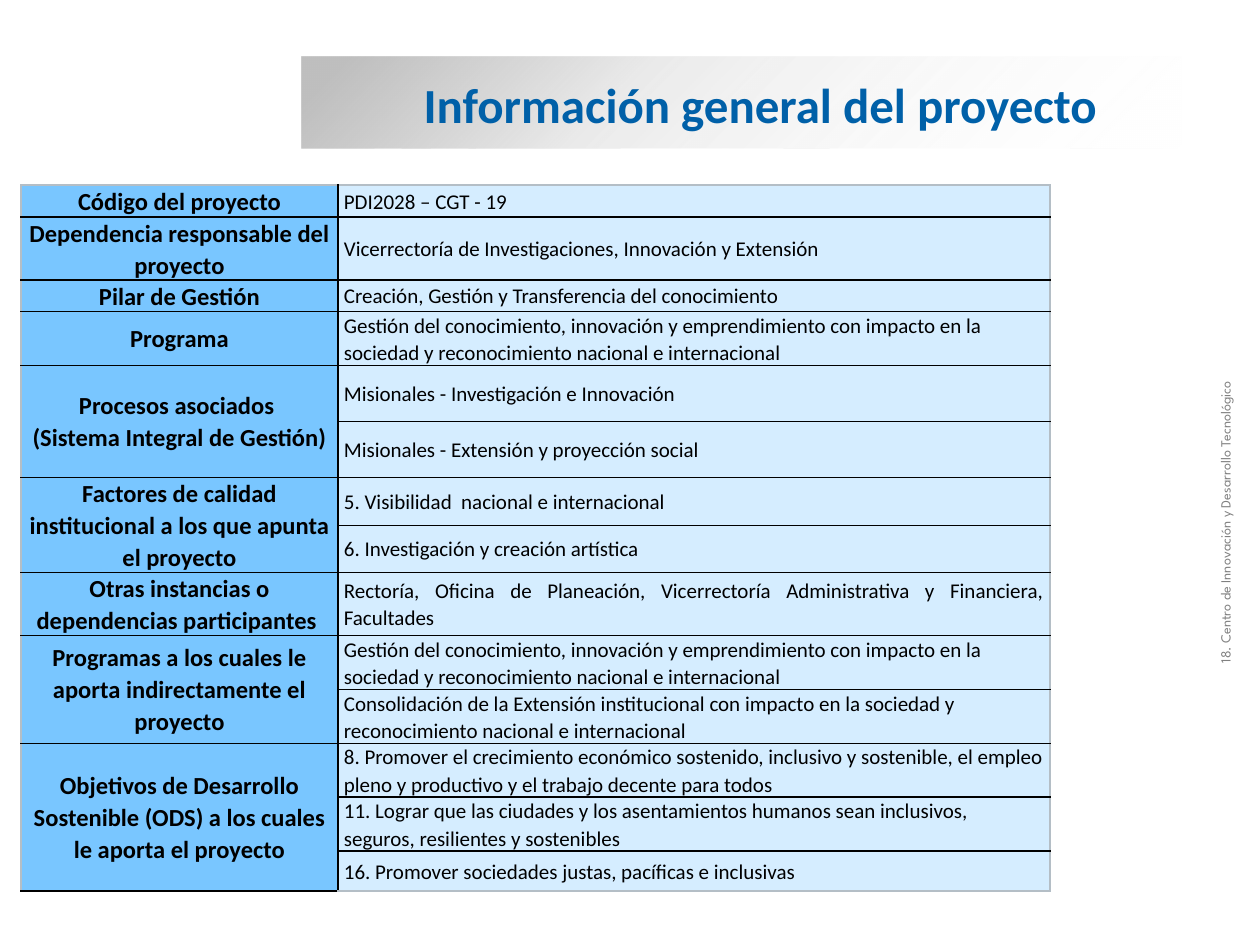
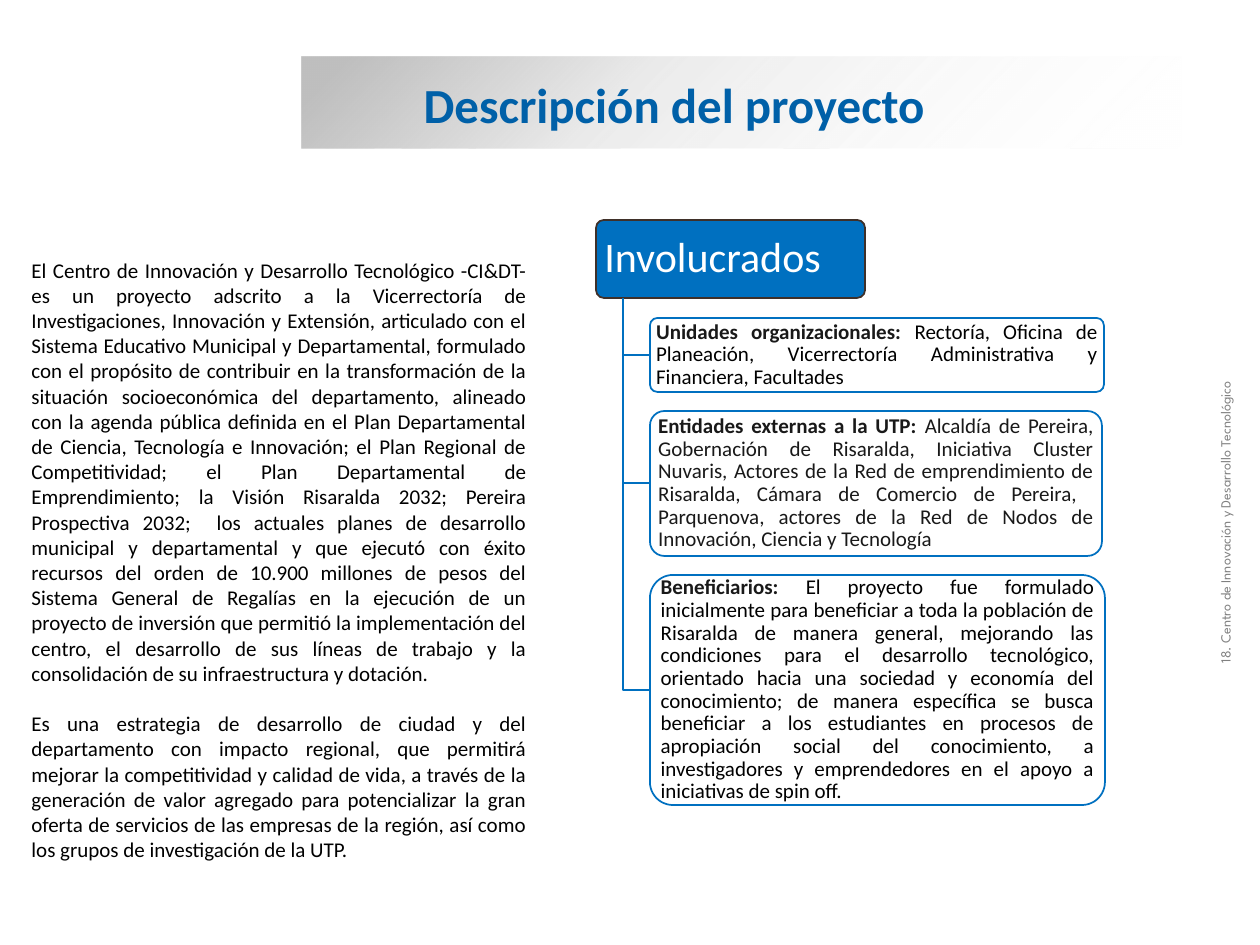
from dataclasses import dataclass

from pptx import Presentation
from pptx.dml.color import RGBColor
from pptx.enum.shapes import MSO_SHAPE
from pptx.enum.text import MSO_ANCHOR, MSO_AUTO_SIZE, PP_ALIGN
from pptx.oxml import parse_xml
from pptx.oxml.ns import nsdecls, qn
from pptx.util import Pt

RECTANGLE, ROUNDED = MSO_SHAPE.RECTANGLE, MSO_SHAPE.ROUNDED_RECTANGLE
MIDDLE, NO_AUTOFIT = MSO_ANCHOR.MIDDLE, MSO_AUTO_SIZE.NONE
LEFT, CENTER, JUSTIFY = PP_ALIGN.LEFT, PP_ALIGN.CENTER, PP_ALIGN.JUSTIFY
SCALE = 914400 / 126


@dataclass(frozen=True)
class Theme:
    font: str = "Calibri"
    footer_font: str = "League Spartan"
    title: str = "0060A8"
    accent: str = "0070C0"
    header_line: str = "3F3029"
    band: str = "BFBFBF"
    white: str = "FFFFFF"
    black: str = "000000"
    dark: str = "191919"
    footer: str = "808080"
    label_fill: str = "79C6FF"
    value_fill: str = "D5EDFF"
    outer_border: str = "B4BEC6"
    title_size: int = 28
    header_size: int = 24
    label_size: int = 14
    body_size: int = 12
    footer_size: int = 8


theme = Theme()


def px(value):
    return round(value * SCALE)


def style(font, size, color, bold=False, name=theme.font):
    font.name = name
    font.size = Pt(size)
    font.bold = bold
    font.color.rgb = RGBColor.from_string(color)


presentation = Presentation()
presentation.slide_width = px(1260)
presentation.slide_height = px(945)
title_only = presentation.slide_layouts[5]

slides = []
for title_text in ("Información general del proyecto", "Descripción del proyecto"):
    slide = presentation.slides.add_slide(title_only)
    slides.append(slide)

    band = slide.shapes.add_shape(RECTANGLE, px(302), px(57), px(880), px(91))
    band.shadow.inherit = False
    band.line.fill.background()
    band.fill.gradient()
    band.fill.gradient_angle = 315
    stops = band.element.spPr.find(qn("a:gradFill")).find(qn("a:gsLst"))
    for stop in list(stops):
        stops.remove(stop)
    for position, color, alpha in ((5, theme.band, 100), (37, theme.band, 31), (100, theme.white, 0)):
        stops.append(parse_xml(
            f'<a:gs {nsdecls("a")} pos="{position * 1000}"><a:srgbClr val="{color}">'
            f'<a:alpha val="{alpha * 1000}"/></a:srgbClr></a:gs>'))

    title = slide.shapes.title
    title.left, title.top, title.width, title.height = px(411), px(68), px(781), px(72)
    band.element.addnext(title.element)
    title_frame = title.text_frame
    title_frame.auto_size = NO_AUTOFIT
    title_frame.vertical_anchor = MIDDLE
    paragraph = title_frame.paragraphs[0]
    paragraph.text = title_text
    paragraph.alignment = LEFT
    style(paragraph.font, theme.title_size, theme.title, True)

    footer = slide.shapes.add_textbox(px(908), px(343), px(635), px(30))
    footer.rotation = 270
    footer.text_frame.word_wrap = True
    paragraph = footer.text_frame.paragraphs[0]
    paragraph.text = "18. Centro de Innovación y Desarrollo Tecnológico"
    style(paragraph.font, theme.footer_size, theme.footer, name=theme.footer_font)

information, description = slides

knowledge_program = (
    "Gestión del conocimiento, innovación y emprendimiento con impacto en la "
    "sociedad y reconocimiento nacional e internacional")
organizational_units = (
    "Rectoría, Oficina de Planeación, Vicerrectoría Administrativa y Financiera, Facultades")

project_facts = [
    ("Código del proyecto", [("PDI2028 – CGT - 19", 32)]),
    ("Dependencia responsable del proyecto",
     [("Vicerrectoría de Investigaciones, Innovación y Extensión", 63)]),
    ("Pilar de Gestión", [("Creación, Gestión y Transferencia del conocimiento", 31)]),
    ("Programa", [(knowledge_program, 54)]),
    ("Procesos asociados \n(Sistema Integral de Gestión)",
     [("Misionales - Investigación e Innovación", 56),
      ("Misionales - Extensión y proyección social", 56)]),
    ("Factores de calidad institucional a los que apunta el proyecto",
     [("5. Visibilidad  nacional e internacional", 48),
      ("6. Investigación y creación artística", 47)]),
    ("Otras instancias o dependencias participantes ", [(organizational_units, 63)]),
    ("Programas a los cuales le aporta indirectamente el proyecto",
     [(knowledge_program, 54),
      ("Consolidación de la Extensión institucional con impacto en la sociedad y "
       "reconocimiento nacional e internacional", 54)]),
    ("Objetivos de Desarrollo Sostenible (ODS) a los cuales le aporta el proyecto",
     [("8. Promover el crecimiento económico sostenido, inclusivo y sostenible, el empleo "
       "pleno y productivo y el trabajo decente para todos", 54),
      ("11. Lograr que las ciudades y los asentamientos humanos sean inclusivos, "
       "seguros, resilientes y sostenibles", 54),
      ("16. Promover sociedades justas, pacíficas e inclusivas", 40)]),
]
fact_rows = []
for label, values in project_facts:
    for index, (value, height) in enumerate(values):
        fact_rows.append((label if index == 0 else "", value, height, len(values)))

table_height = sum(row[2] for row in fact_rows)
table = information.shapes.add_table(
    len(fact_rows), 2, px(21), px(185), px(1029), px(table_height)).table
table.first_row = False
table.horz_banding = False
table.columns[0].width = px(317)
table.columns[1].width = px(712)

last_row = len(fact_rows) - 1
for row, (label, value, height, span) in enumerate(fact_rows):
    table.rows[row].height = px(height)
    value_alignment = JUSTIFY if value == organizational_units else LEFT
    columns = (
        (label, theme.label_fill, theme.label_size, True, CENTER, 5),
        (value, theme.value_fill, theme.body_size, False, value_alignment, 6),
    )
    for column, (text, fill, size, bold, alignment, margin) in enumerate(columns):
        cell = table.cell(row, column)
        cell.vertical_anchor = MIDDLE
        cell.margin_left = cell.margin_right = px(margin)
        cell.margin_top = cell.margin_bottom = 0
        paragraph = cell.text_frame.paragraphs[0]
        paragraph.text = text
        paragraph.alignment = alignment
        paragraph.line_spacing = 1.07
        style(paragraph.font, size, theme.black, bold)
        edges = (("L", column == 0), ("R", column == 1), ("T", row == 0), ("B", row == last_row))
        properties = cell._tc.get_or_add_tcPr()
        for edge, is_outer in edges:
            color = theme.outer_border if is_outer else theme.black
            properties.append(parse_xml(
                f'<a:ln{edge} {nsdecls("a")} w="12700"><a:solidFill>'
                f'<a:srgbClr val="{color}"/></a:solidFill></a:ln{edge}>'))
        cell.fill.solid()
        cell.fill.fore_color.rgb = RGBColor.from_string(fill)
    if label and span > 1:
        table.cell(row, 0).merge(table.cell(row + span - 1, 0))

summary = description.shapes.add_textbox(px(19), px(251), px(520), px(624))
summary.text_frame.word_wrap = True
project_scope = (
    "El Centro de Innovación y Desarrollo Tecnológico -CI&DT- es un proyecto adscrito a la "
    "Vicerrectoría de Investigaciones, Innovación y Extensión, articulado con el Sistema "
    "Educativo Municipal y Departamental, formulado con el propósito de contribuir en la "
    "transformación de la situación socioeconómica del departamento, alineado con la agenda "
    "pública definida en el Plan Departamental de Ciencia, Tecnología e Innovación; ")
project_plans = (
    "el Plan Regional de Competitividad; el Plan Departamental de Emprendimiento; la Visión "
    "Risaralda 2032; Pereira Prospectiva 2032;  los actuales planes de desarrollo municipal y "
    "departamental y que ejecutó con éxito recursos del orden de 10.900 millones de pesos del "
    "Sistema General de Regalías en la ejecución de un proyecto de inversión que permitió la "
    "implementación del centro, el desarrollo de sus líneas de trabajo y la consolidación de "
    "su infraestructura y dotación.")
city_strategy = (
    "Es una estrategia de desarrollo de ciudad y del departamento con impacto regional, que "
    "permitirá mejorar la competitividad y calidad de vida, a través de la generación de valor "
    "agregado para potencializar la gran oferta de servicios de las empresas de la región, así "
    "como los grupos de investigación de la UTP.")
for index, text in enumerate((project_scope + project_plans, city_strategy)):
    paragraph = summary.text_frame.add_paragraph() if index else summary.text_frame.paragraphs[0]
    paragraph.text = text
    paragraph.alignment = JUSTIFY
    if index:
        paragraph.space_before = Pt(14.4)
    style(paragraph.font, theme.body_size, theme.black)

stakeholders = [
    ((596, 220, 269, 78), theme.accent, theme.header_line, LEFT, theme.header_size, 6,
     [("Involucrados", theme.white, False)]),
    ((650, 318, 454, 74), theme.white, theme.accent, JUSTIFY, theme.body_size, 4,
     [("Unidades organizacionales: ", theme.dark, True),
      (organizational_units, theme.black, False)]),
    ((650, 411, 452, 145), theme.white, theme.accent, JUSTIFY, theme.body_size, 4,
     [("Entidades externas a la UTP: ", theme.dark, True),
      ("Alcaldía de Pereira, Gobernación de Risaralda, Iniciativa Cluster Nuvaris, Actores de "
       "la Red de emprendimiento de Risaralda, Cámara de Comercio de Pereira,  Parquenova, "
       "actores de la Red de Nodos de Innovación, Ciencia y Tecnología", theme.dark, False)]),
    ((650, 575, 455, 230), theme.white, theme.accent, JUSTIFY, theme.body_size, 4,
     [("Beneficiarios: ", theme.dark, True),
      ("El proyecto fue formulado inicialmente para beneficiar a toda la población de Risaralda "
       "de manera general, mejorando las condiciones para el desarrollo tecnológico, orientado "
       "hacia una sociedad y economía del conocimiento; de manera específica se busca "
       "beneficiar a los estudiantes en procesos de apropiación social del conocimiento, a "
       "investigadores y emprendedores en el apoyo a iniciativas de spin off.",
       theme.black, False)]),
]
trunk_x, trunk_top = 623, 298
for index, (bounds, fill, line, alignment, size, margin, runs) in enumerate(stakeholders):
    left, top, width, height = bounds
    if index:
        builder = description.shapes.build_freeform(trunk_x, trunk_top, scale=SCALE)
        middle = top + height // 2
        builder.add_line_segments([(trunk_x, middle), (left, middle)], close=False)
        branch = builder.convert_to_shape()
        branch.shadow.inherit = False
        branch.fill.background()
        branch.line.color.rgb = RGBColor.from_string(theme.accent)
        branch.line.width = Pt(1)

    box = description.shapes.add_shape(ROUNDED, *map(px, bounds))
    box.adjustments[0] = 0.1
    box.shadow.inherit = False
    box.fill.solid()
    box.fill.fore_color.rgb = RGBColor.from_string(fill)
    box.line.color.rgb = RGBColor.from_string(line)
    box.line.width = Pt(1)
    frame = box.text_frame
    frame.word_wrap = True
    frame.vertical_anchor = MIDDLE
    frame.margin_left = frame.margin_right = px(margin)
    frame.margin_top = frame.margin_bottom = px(3)
    paragraph = frame.paragraphs[0]
    paragraph.alignment = alignment
    paragraph.line_spacing = 0.9
    for text, color, bold in runs:
        run = paragraph.add_run()
        run.text = text
        style(run.font, size, color, bold)

presentation.save("out.pptx")
